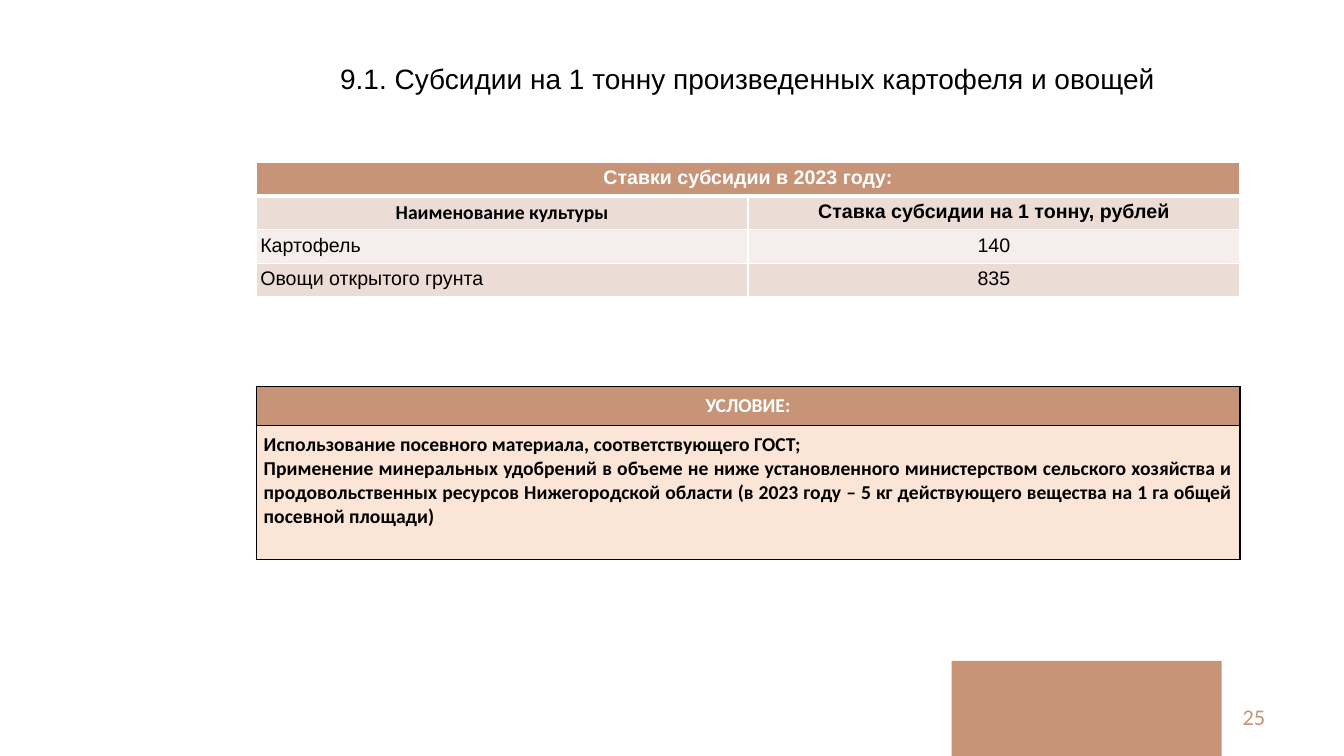
from lxml import etree
from pptx import Presentation
from pptx.dml.color import RGBColor
from pptx.enum import shapes, text
from pptx.oxml import ns
from pptx.util import Pt

CLAY, ROSE, PALE, PEACH = "C79478", "EBDCD6", "F5EEEC", "FBE5D6"
WHITE, BLACK = "FFFFFF", "000000"
LEFT, CENTER, JUSTIFY = text.PP_ALIGN.LEFT, text.PP_ALIGN.CENTER, text.PP_ALIGN.JUSTIFY
TOP, MIDDLE = text.MSO_ANCHOR.TOP, text.MSO_ANCHOR.MIDDLE

HEADING = "9.1. Субсидии на 1 тонну произведенных картофеля и овощей"
PAGE = "25"
HEAD = {"size": 14, "name": "Arial", "color": WHITE, "bold": True}
LABEL = {**HEAD, "color": BLACK}
BODY = {**LABEL, "bold": False}
CALIBRI = {"name": "Calibri"}

RATES = {
    "top": 116, "heights": [24] * 4, "columns": 2, "line": WHITE, "header_line": 3,
    "rows": [
        (CLAY, 7.2, 3.4, TOP, [("Ставки субсидии в 2023 году:", CENTER, HEAD)]),
        (ROSE, 2.9, 3.4, TOP, [("Наименование культуры", CENTER, {**LABEL, **CALIBRI}),
                               ("Ставка субсидии на 1 тонну, рублей", CENTER, LABEL)]),
        (PALE, 2.9, 3.4, TOP, [("Картофель", JUSTIFY, BODY), ("140", CENTER, BODY)]),
        (ROSE, 2.9, 3.4, TOP, [("Овощи открытого грунта", JUSTIFY, BODY),
                               ("835", CENTER, BODY)]),
    ],
}
CONDITIONS = {
    "top": 276, "heights": [28, 95.4], "columns": 1, "line": BLACK, "header_line": 1,
    "rows": [
        (CLAY, 5.4, 5.4, MIDDLE, [("УСЛОВИЕ:", CENTER, {**HEAD, **CALIBRI})]),
        (PEACH, 5.4, 5.4, TOP, [(
            "Использование посевного материала, соответствующего ГОСТ;\n"
            "Применение минеральных удобрений в объеме не ниже установленного "
            "министерством сельского хозяйства и продовольственных ресурсов "
            "Нижегородской области (в 2023 году – 5 кг действующего вещества "
            "на 1 га общей посевной площади)", JUSTIFY, {**LABEL, **CALIBRI})]),
    ],
}
TABLE_LEFT, TABLE_WIDTH = 183, 702.7


def rgb(value):
    return RGBColor.from_string(value)


def place(left, top, width, height):
    return [Pt(v) for v in (left, top, width, height)]


def write(frame, words, align, style):
    frame.text = words
    for paragraph in frame.paragraphs:
        paragraph.alignment = align
        for run in paragraph.runs:
            for key, value in style.items():
                if key == "color":
                    run.font.color.rgb = rgb(value)
                else:
                    setattr(run.font, key, Pt(value) if key == "size" else value)


def border(cell, color, top, bottom):
    properties = cell._tc.get_or_add_tcPr()
    for side, width in (("L", 1), ("R", 1), ("T", top), ("B", bottom)):
        line = etree.SubElement(properties, ns.qn(f"a:ln{side}"), w=str(Pt(width)))
        fill = etree.SubElement(line, ns.qn("a:solidFill"))
        etree.SubElement(fill, ns.qn("a:srgbClr"), val=color)


def add_grid(slide, data):
    heights, columns = data["heights"], data["columns"]
    table = slide.shapes.add_table(
        len(heights), columns,
        *place(TABLE_LEFT, data["top"], TABLE_WIDTH, sum(heights))).table
    table.first_row = table.horz_banding = False
    for column in table.columns:
        column.width = Pt(TABLE_WIDTH / columns)
    for r, (fill, side, edge, anchor, cells) in enumerate(data["rows"]):
        table.rows[r].height = Pt(heights[r])
        for c in range(columns):
            cell = table.cell(r, c)
            border(cell, data["line"], data["header_line"] if r == 1 else 1,
                   data["header_line"] if r == 0 else 1)
            cell.fill.solid()
            cell.fill.fore_color.rgb = rgb(fill)
            cell.margin_left = cell.margin_right = Pt(side)
            cell.margin_top = cell.margin_bottom = Pt(edge)
            cell.vertical_anchor = anchor
        if len(cells) < columns:
            table.cell(r, 0).merge(table.cell(r, columns - 1))
        for c, (words, align, style) in enumerate(cells):
            write(table.cell(r, c).text_frame, words, align, style)


def main():
    deck = Presentation()
    deck.slide_width, deck.slide_height = Pt(960), Pt(540)
    slide = deck.slides.add_slide(deck.slide_layouts[5])

    block = slide.shapes.add_shape(shapes.MSO_SHAPE.RECTANGLE, *place(679.7, 472, 193, 68))
    block.shadow.inherit = False
    block.fill.solid()
    block.fill.fore_color.rgb = rgb(CLAY)
    block.line.fill.background()

    page = slide.shapes.add_textbox(*place(694.8, 497, 216, 29)).text_frame
    page.word_wrap = True
    page.vertical_anchor = MIDDLE
    write(page, PAGE, text.PP_ALIGN.RIGHT, {"size": 16, "name": "Calibri", "color": CLAY})

    title = slide.shapes.title
    title.left, title.top, title.width, title.height = place(151, 40.3, 766, 31.7)
    title.text_frame.vertical_anchor = TOP
    title.text_frame.auto_size = text.MSO_AUTO_SIZE.SHAPE_TO_FIT_TEXT
    write(title.text_frame, HEADING, CENTER, {**BODY, "size": 20})

    for data in (RATES, CONDITIONS):
        add_grid(slide, data)
    deck.save("out.pptx")


if __name__ == "__main__":
    main()
